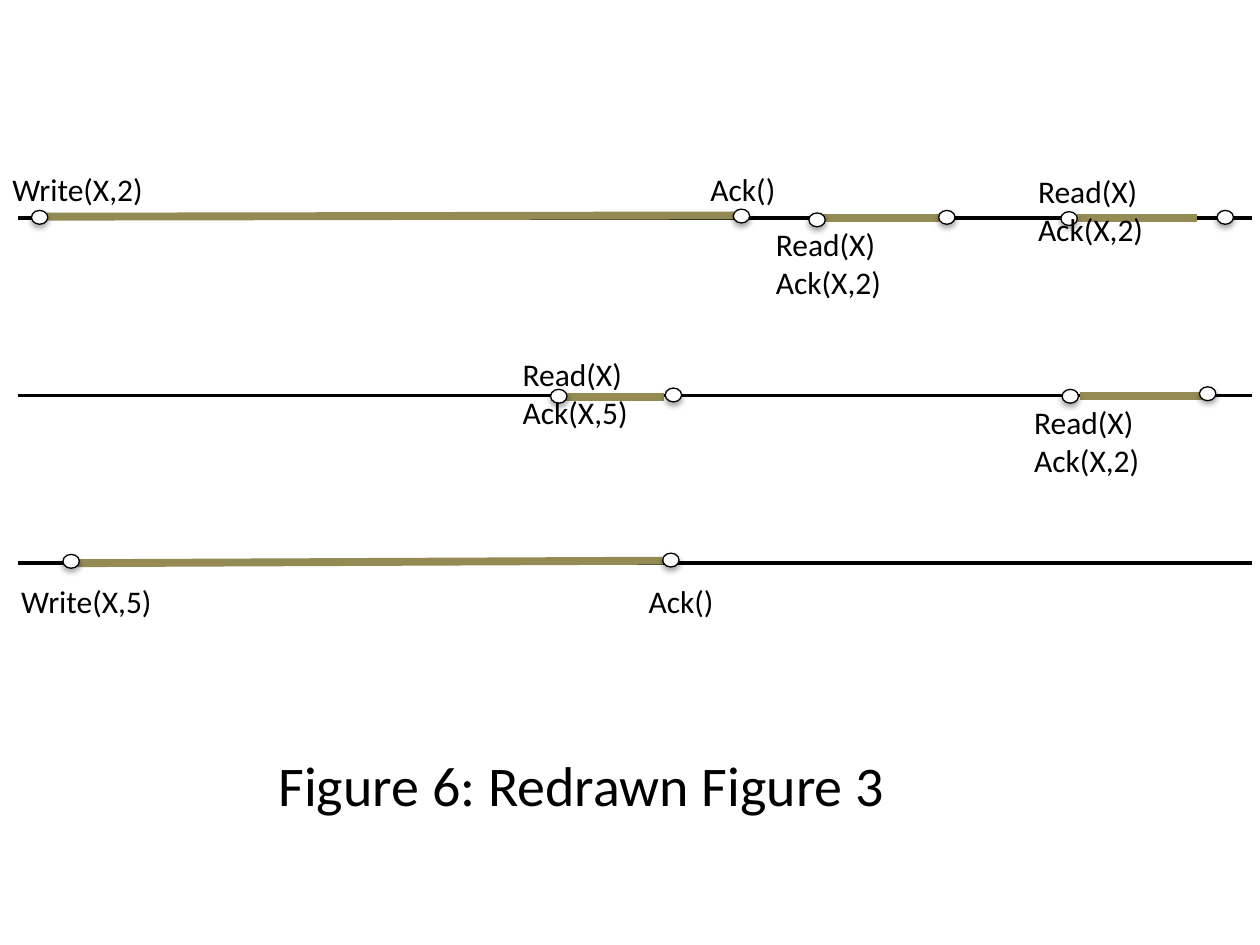
from typing import NamedTuple

from lxml import etree
from pptx import Presentation
from pptx.dml.color import RGBColor
from pptx.enum.shapes import MSO_CONNECTOR, MSO_SHAPE
from pptx.enum.text import MSO_ANCHOR, MSO_AUTO_SIZE, PP_ALIGN
from pptx.oxml import parse_xml
from pptx.oxml.ns import qn
from pptx.util import Inches, Pt

STRAIGHT = MSO_CONNECTOR.STRAIGHT
OVAL = MSO_SHAPE.OVAL
TOP = MSO_ANCHOR.TOP
LEFT = PP_ALIGN.LEFT
FIXED = MSO_AUTO_SIZE.NONE

BLACK, WHITE, OLIVE = "000000", "FFFFFF", "948A54"
FONT = "Calibri"
DOT_W, DOT_H = 0.13, 0.11
SHADOW = (
    '<a:effectLst xmlns:a="http://schemas.openxmlformats.org/drawingml/2006/main">'
    '<a:outerShdw blurRad="40000" dist="23000" dir="5400000" rotWithShape="0">'
    '<a:srgbClr val="000000"><a:alpha val="35000"/></a:srgbClr>'
    "</a:outerShdw></a:effectLst>"
)


class Line(NamedTuple):
    x1: float
    y1: float
    x2: float
    y2: float


class Dot(NamedTuple):
    x: float
    y: float


class Label(NamedTuple):
    x: float
    y: float
    text: str


AXES = [Line(0.14, y, 9.94, y) for y in (1.73, 3.14, 4.47)]
BARS = [
    Line(0.37, 1.72, 5.82, 1.71),
    Line(6.53, 1.73, 7.45, 1.73),
    Line(8.55, 1.73, 9.5, 1.73),
    Line(4.37, 3.15, 5.27, 3.15),
    Line(8.57, 3.14, 9.54, 3.14),
    Line(0.61, 4.47, 5.26, 4.45),
]
DOTS = [
    Dot(0.25, 1.67), Dot(5.82, 1.66), Dot(6.42, 1.69),
    Dot(7.45, 1.67), Dot(8.42, 1.68), Dot(9.66, 1.67),
    Dot(4.37, 3.09), Dot(5.28, 3.08), Dot(8.43, 3.09), Dot(9.52, 3.07),
    Dot(0.5, 4.4), Dot(5.26, 4.39),
]
LABELS = [
    Label(0, 1.3, "Write(X,2)"),
    Label(5.54, 1.3, "Ack()"),
    Label(6.06, 1.74, "Read(X)\nAck(X,2)"),
    Label(8.14, 1.32, "Read(X)\nAck(X,2)"),
    Label(4.05, 2.77, "Read(X)\nAck(X,5)"),
    Label(8.11, 3.15, "Read(X)\nAck(X,2)"),
    Label(0.07, 4.57, "Write(X,5)"),
    Label(5.05, 4.57, "Ack()"),
]


def paint(target, color: str) -> None:
    target.rgb = RGBColor.from_string(color)


def write(shape, text: str, *, size: float = 18, color: str = BLACK) -> None:
    frame = shape.text_frame
    frame.text = text
    frame.word_wrap = True
    frame.auto_size = FIXED
    frame.vertical_anchor = TOP
    for para in frame.paragraphs:
        para.alignment = LEFT
        para.font.name = FONT
        para.font.size = Pt(size)
        paint(para.font.color, color)


def place(shape, x: float, y: float, wide: float, high: float) -> None:
    shape.left, shape.top = Inches(x), Inches(y)
    shape.width, shape.height = Inches(wide), Inches(high)


def draw_line(shapes, line: Line, color: str, width: float) -> None:
    link = shapes.add_connector(STRAIGHT, *map(Inches, line))
    paint(link.line.color, color)
    link.line.width = Pt(width)
    etree.SubElement(link._element.spPr, qn("a:effectLst"))


def draw_dot(shapes, dot: Dot) -> None:
    oval = shapes.add_shape(OVAL, *map(Inches, (*dot, DOT_W, DOT_H)))
    oval.fill.solid()
    paint(oval.fill.fore_color, WHITE)
    paint(oval.line.color, BLACK)
    oval.line.width = Pt(0.75)
    oval._element.spPr.append(parse_xml(SHADOW))


def draw_label(shapes, label: Label) -> None:
    lines = label.text.count("\n") + 1
    size = (1.3, 0.1 + 0.3 * lines)
    box = shapes.add_textbox(*map(Inches, (label.x, label.y, *size)))
    write(box, label.text)


def main() -> None:
    deck = Presentation()
    deck.slide_width, deck.slide_height = Inches(10), Inches(7.5)
    shapes = deck.slides.add_slide(deck.slide_layouts[5]).shapes

    for axis in AXES:
        draw_line(shapes, axis, BLACK, 2)
    for bar in BARS:
        draw_line(shapes, bar, OLIVE, 4.5)
    for dot in DOTS:
        draw_dot(shapes, dot)
    for label in LABELS:
        draw_label(shapes, label)

    place(shapes.title, 2.11, 5.91, 5.09, 0.64)
    write(shapes.title, "Figure 6: Redrawn Figure 3", size=32)
    deck.save("out.pptx")


if __name__ == "__main__":
    main()
